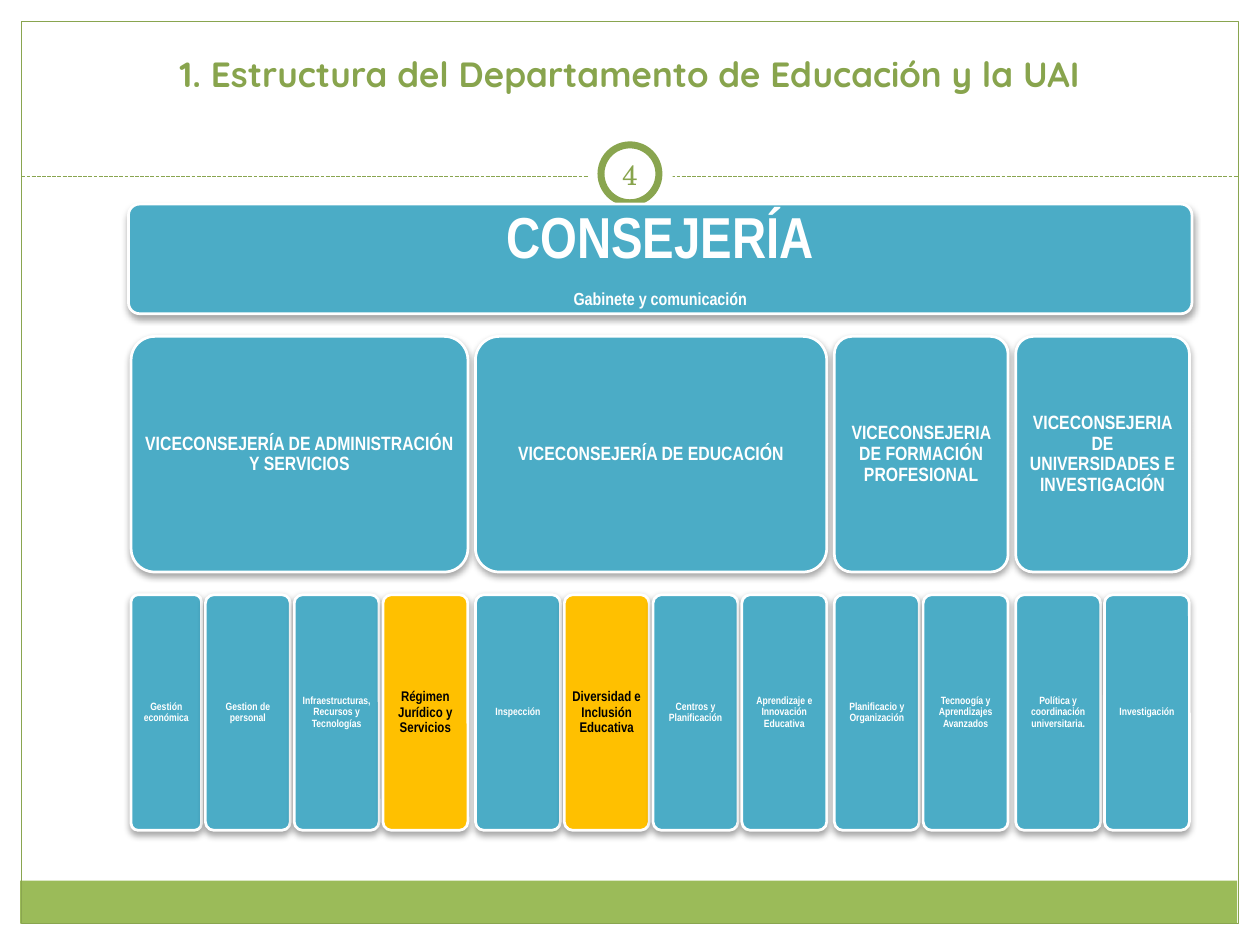
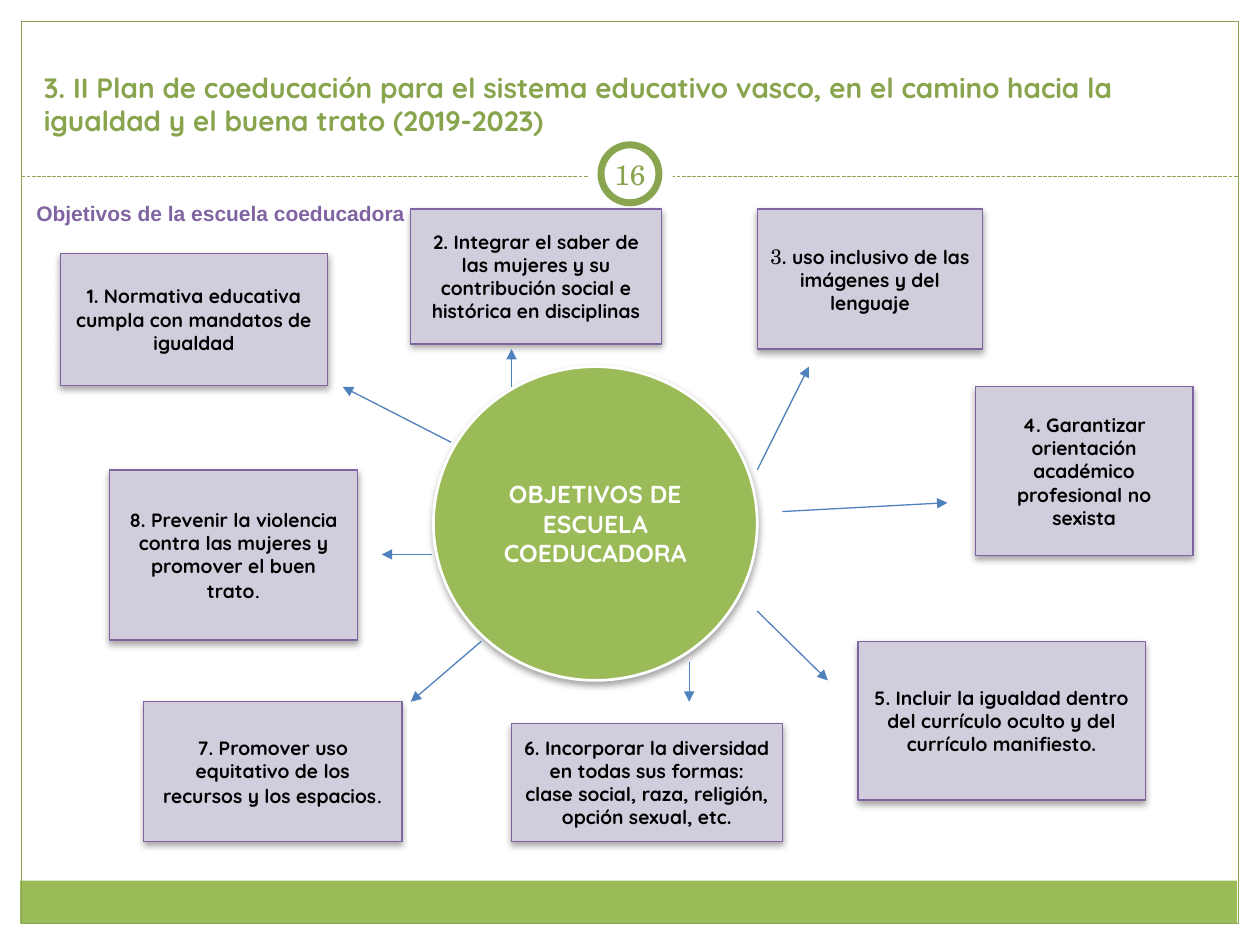
"""Builds two slides: the department structure and the goals of the coeducational school."""
from lxml import etree
from pptx import Presentation
from pptx.dml.color import RGBColor
from pptx.enum.dml import MSO_LINE
from pptx.enum.shapes import MSO_CONNECTOR, MSO_SHAPE
from pptx.enum.text import MSO_ANCHOR, PP_ALIGN
from pptx.oxml.ns import qn
from pptx.util import Inches, Pt

WHITE = RGBColor(0xFF, 0xFF, 0xFF)
BLACK = RGBColor(0x00, 0x00, 0x00)
GREEN = RGBColor(0x9B, 0xBB, 0x59)
FRAME_GREEN = RGBColor(0x89, 0xA5, 0x4F)
TITLE_GREEN = RGBColor(0x88, 0xA4, 0x4D)
TEAL = RGBColor(0x4B, 0xAC, 0xC6)
AMBER = RGBColor(0xFF, 0xC0, 0x00)
LILAC = RGBColor(0xD2, 0xCD, 0xDC)
PURPLE = RGBColor(0x80, 0x64, 0xA2)
BLUE = RGBColor(0x4F, 0x81, 0xBD)

HEAD, SERIF, NARROW, SANS = "Quicksand", "TeX Gyre Schola", "Arial Narrow", "Arial"
CENTER, LEFT = PP_ALIGN.CENTER, PP_ALIGN.LEFT

STRUCTURE_TITLE = "1. Estructura del Departamento de Educación y la UAI"
TOP_UNIT = [("CONSEJERÍA", 33), ("Gabinete y comunicación", 10)]
BRANCHES = [
    ("VICECONSEJERÍA DE ADMINISTRACIÓN Y SERVICIOS",
     ["Gestión económica", "Gestion de personal",
      "Infraestructuras, Recursos y Tecnologías", "Régimen Jurídico y Servicios"]),
    ("VICECONSEJERÍA DE EDUCACIÓN",
     ["Inspección", "Diversidad e Inclusión Educativa",
      "Centros y Planificación", "Aprendizaje e Innovación Educativa"]),
    ("VICECONSEJERIA DE FORMACIÓN PROFESIONAL",
     ["Planificacio y Organización", "Tecnoogía y Aprendizajes Avanzados"]),
    ("VICECONSEJERIA DE UNIVERSIDADES E INVESTIGACIÓN",
     ["Política y coordinación universitaria.", "Investigación"]),
]
HIGHLIGHTED = {"Régimen Jurídico y Servicios", "Diversidad e Inclusión Educativa"}

CHART_LEFT, CHART_WIDTH = 1.04, 8.4
BRANCH_GAP, UNIT_GAP = 0.06, 0.03
FIRST_UNIT_WIDTH = 0.56
BRANCH_TOP, UNIT_TOP, ROW_HEIGHT = 2.67, 4.72, 1.87

PLAN_TITLE = ("3. II Plan de coeducación para el sistema educativo vasco, "
              "en el camino hacia la igualdad y el buena trato (2019-2023)")
PLAN_LABEL = "Objetivos de la escuela coeducadora"
HUB = "OBJETIVOS DE ESCUELA COEDUCADORA"
GOALS = [
    ((0.48, 2.01, 2.12, 1.05), "", "1. Normativa educativa cumpla con mandatos de igualdad", ""),
    ((3.26, 1.66, 1.99, 1.07), "", "2. Integrar el saber de las mujeres y su contribución "
     "social e histórica en disciplinas", ""),
    ((6.01, 1.66, 1.79, 1.11), "3", ". uso inclusivo de las imágenes y del lenguaje", ""),
    ((7.74, 3.07, 1.73, 1.34), "", "4. Garantizar orientación académico profesional "
     "no sexista", ""),
    ((6.81, 5.09, 2.28, 1.26), "", "5. Incluir la igualdad dentro del currículo oculto "
     "y del currículo manifiesto.", ""),
    ((4.06, 5.74, 2.15, 0.94), "", "6. Incorporar la diversidad en todas sus formas: "
     "clase social, raza, religión, opción sexual, etc.", ""),
    ((0.87, 3.73, 1.97, 1.35), "", "8. Prevenir la violencia contra las mujeres y promover "
     "el buen trato", "."),
    ((1.14, 5.57, 2.05, 1.11), "", "7. Promover uso equitativo de los recursos y los "
     "espacios", "."),
]
ARROWS = [
    (6.21, 4.06, 7.52, 3.99), (6.01, 4.85, 6.57, 5.4), (5.47, 5.25, 5.47, 5.57),
    (3.82, 5.09, 3.26, 5.57), (3.43, 4.4, 3.03, 4.4), (3.58, 3.51, 2.72, 3.07),
    (4.06, 3.07, 4.06, 2.77), (6.01, 3.73, 6.42, 2.91),
]


def add_shape(slide, kind, box, fill=None, line=None, width=0.75, shadow=False):
    """Add a preset shape with its fill, outline and optional soft shadow."""
    sp = slide.shapes.add_shape(kind, *map(Inches, box))
    sp.shadow.inherit = False
    if fill is None:
        sp.fill.background()
    else:
        sp.fill.solid()
        sp.fill.fore_color.rgb = fill
    if line is None:
        sp.line.fill.background()
    else:
        sp.line.color.rgb = line
        sp.line.width = Pt(width)
    if shadow:
        effects = sp.element.spPr.find(qn("a:effectLst"))
        outer = etree.SubElement(effects, qn("a:outerShdw"), blurRad=str(Pt(4)),
                                 dist=str(Pt(2)), dir="5400000", rotWithShape="0")
        color = etree.SubElement(outer, qn("a:srgbClr"), val="000000")
        etree.SubElement(color, qn("a:alpha"), val="35000")
    return sp


def add_line(slide, ends, color):
    """Add a thin straight line without a shadow."""
    line = slide.shapes.add_connector(MSO_CONNECTOR.STRAIGHT, *map(Inches, ends))
    line.line.color.rgb = color
    line.line.width = Pt(0.75)
    etree.SubElement(line.element.spPr, qn("a:effectLst"))
    return line


def write(sp, paragraphs, align=CENTER, anchor=MSO_ANCHOR.MIDDLE, inset=None,
          wrap=True, spacing=None, after=0):
    """Write paragraphs, each a list of (text, size, font, color, bold) runs."""
    tf = sp.text_frame
    tf.word_wrap = wrap
    tf.vertical_anchor = anchor
    if inset is not None:
        tf.margin_left = tf.margin_right = tf.margin_top = tf.margin_bottom = Inches(inset)
    for i, runs in enumerate(paragraphs):
        p = tf.add_paragraph() if i else tf.paragraphs[0]
        p.alignment = align
        if spacing:
            p.line_spacing = spacing
        if i < len(paragraphs) - 1:
            p.space_after = Pt(after)
        for text, size, font, color, bold in runs:
            r = p.add_run()
            r.text = text
            r.font.size, r.font.name, r.font.bold = Pt(size), font, bold
            r.font.color.rgb = color


def add_text(slide, box, run, **options):
    """Add a text box holding one run."""
    write(slide.shapes.add_textbox(*map(Inches, box)), [[run]], **options)


def add_base(prs, number, title, title_box, title_size, title_align):
    """Add a slide with the shared frame, band, number badge and title."""
    slide = prs.slides.add_slide(prs.slide_layouts[6])
    add_shape(slide, MSO_SHAPE.RECTANGLE, (0.16, 6.99, 9.66, 0.34), GREEN)
    add_shape(slide, MSO_SHAPE.RECTANGLE, (0.17, 0.17, 9.66, 7.16), line=FRAME_GREEN)
    add_line(slide, (0.17, 1.4, 9.83, 1.4), FRAME_GREEN).line.dash_style = MSO_LINE.SQUARE_DOT
    add_shape(slide, MSO_SHAPE.OVAL, (4.67, 1.05, 0.67, 0.67), WHITE)
    add_shape(slide, MSO_SHAPE.OVAL, (4.77, 1.15, 0.46, 0.46), WHITE, FRAME_GREEN, 4)
    add_text(slide, (4.75, 1.14, 0.5, 0.48), (number, 16, SERIF, TITLE_GREEN, False), inset=0.05)
    add_text(slide, title_box, (title, title_size, HEAD, TITLE_GREEN, True),
             align=title_align, anchor=MSO_ANCHOR.BOTTOM)
    return slide


def add_unit(slide, box, lines, inset, fill=TEAL, color=WHITE):
    """Add one rounded box of the organisation chart."""
    sp = add_shape(slide, MSO_SHAPE.ROUNDED_RECTANGLE, box, fill, WHITE, 1.57, shadow=True)
    sp.adjustments[0] = 0.1
    write(sp, [[(text, size, NARROW, color, True)] for text, size in lines],
          inset=inset, spacing=0.9, after=11)


def build_structure(prs):
    """Build the organisation chart."""
    slide = add_base(prs, "4", STRUCTURE_TITLE, (0.5, 0.14, 9, 0.66), 20, CENTER)
    add_unit(slide, (1.02, 1.62, 8.44, 0.87), TOP_UNIT, 0.14)
    count = sum(len(units) for _, units in BRANCHES)
    gaps = BRANCH_GAP * (len(BRANCHES) - 1) + UNIT_GAP * (count - len(BRANCHES))
    unit_width = (CHART_WIDTH - gaps - FIRST_UNIT_WIDTH) / (count - 1)
    x = CHART_LEFT
    for b, (branch, units) in enumerate(BRANCHES):
        left = x
        for u, unit in enumerate(units):
            width = FIRST_UNIT_WIDTH if b == u == 0 else unit_width
            size, fill, color = (8, AMBER, BLACK) if unit in HIGHLIGHTED else (6, TEAL, WHITE)
            add_unit(slide, (x, UNIT_TOP, width, ROW_HEIGHT), [(unit, size)], 0.03, fill, color)
            x += width + UNIT_GAP
        right = x - UNIT_GAP
        add_unit(slide, (left, BRANCH_TOP, right - left, ROW_HEIGHT), [(branch, 11)], 0.05)
        x = right + BRANCH_GAP


def build_goals(prs):
    """Build the hub with its eight goals."""
    slide = add_base(prs, "16", PLAN_TITLE, (0.25, 0.14, 9, 1), 16, LEFT)
    hub = add_shape(slide, MSO_SHAPE.OVAL, (3.44, 2.91, 2.57, 2.49), GREEN, WHITE, 1.57, True)
    write(hub, [[(HUB, 14, HEAD, WHITE, True)]])
    for box, before, text, after in GOALS:
        sp = add_shape(slide, MSO_SHAPE.RECTANGLE, box, LILAC, PURPLE, shadow=True)
        runs = [(before, 12, SERIF, BLACK, False), (text, 11, HEAD, BLACK, True),
                (after, 12, SERIF, BLACK, False)]
        write(sp, [[run for run in runs if run[0]]])
    for ends in ARROWS:
        arrow = add_line(slide, ends, BLUE)
        etree.SubElement(arrow.line._get_or_add_ln(), qn("a:tailEnd"), type="triangle")
    add_text(slide, (0.19, 1.54, 3.16, 0.3), (PLAN_LABEL, 12, SANS, PURPLE, True),
             align=LEFT, anchor=MSO_ANCHOR.TOP, wrap=False)


def main():
    """Create and save the presentation."""
    prs = Presentation()
    prs.slide_width, prs.slide_height = Inches(10), Inches(7.5)
    build_structure(prs)
    build_goals(prs)
    prs.save("out.pptx")


if __name__ == "__main__":
    main()
